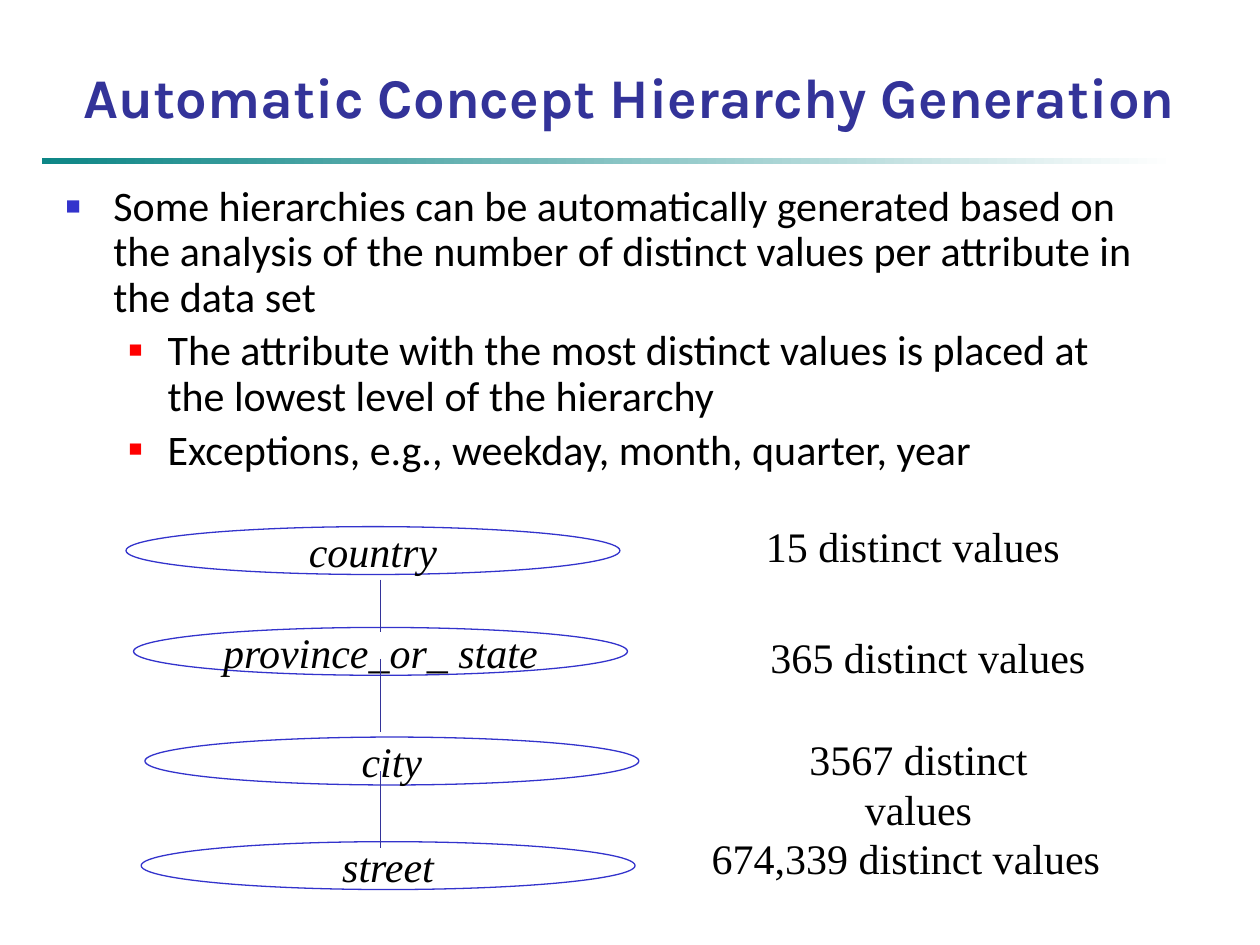
from dataclasses import dataclass

from lxml import etree
from pptx import Presentation
from pptx.dml.color import RGBColor
from pptx.enum import shapes, text
from pptx.oxml import ns
from pptx.util import Inches, Pt


@dataclass(frozen=True)
class Theme:
    title_color: RGBColor = RGBColor(0x33, 0x33, 0x99)
    text_color: RGBColor = RGBColor(0, 0, 0)
    outline: RGBColor = RGBColor(0x33, 0x33, 0xCC)
    bar_start: RGBColor = RGBColor(0x0D, 0x86, 0x86)
    bar_end: RGBColor = RGBColor(0xFF, 0xFF, 0xFF)
    bullet_colors: tuple = ("3333CC", "FF0000")
    bullet_sizes: tuple = (60, 55)
    indents: tuple = ((0.38, -0.38), (0.81, -0.31))
    title_font: str = "Karla"
    body_font: str = "Calibri"
    diagram_font: str = "Times New Roman"
    title_size: Pt = Pt(32)
    text_size: Pt = Pt(24)
    line_width: Pt = Pt(0.75)


class SlideBuilder:
    def __init__(self, slide, theme):
        self.slide = slide
        self.theme = theme

    def place(self, shape, left, top, width, height):
        shape.left, shape.top = Inches(left), Inches(top)
        shape.width, shape.height = Inches(width), Inches(height)

    def format_runs(self, paragraph, name, size, color, bold=False, italic=False):
        for run in paragraph.runs:
            font = run.font
            font.name, font.size = name, size
            font.bold, font.italic = bold, italic
            font.color.rgb = color

    def title(self, wording, *box):
        shape = self.slide.shapes.title
        self.place(shape, *box)
        frame = shape.text_frame
        frame.text = wording
        frame.auto_size = text.MSO_AUTO_SIZE.NONE
        frame.vertical_anchor = text.MSO_ANCHOR.BOTTOM
        paragraph = frame.paragraphs[0]
        paragraph.alignment = text.PP_ALIGN.CENTER
        self.format_runs(paragraph, self.theme.title_font, self.theme.title_size,
                         self.theme.title_color, bold=True)

    def bullet(self, paragraph, level):
        properties = paragraph._p.get_or_add_pPr()
        margin, indent = self.theme.indents[level]
        properties.set("marL", str(Inches(margin)))
        properties.set("indent", str(Inches(indent)))
        color = etree.SubElement(properties, ns.qn("a:buClr"))
        etree.SubElement(color, ns.qn("a:srgbClr"), val=self.theme.bullet_colors[level])
        size = self.theme.bullet_sizes[level] * 1000
        etree.SubElement(properties, ns.qn("a:buSzPct"), val=str(size))
        etree.SubElement(properties, ns.qn("a:buChar"), char="■")

    def bullet_list(self, items, *box):
        shape = self.slide.placeholders[1]
        self.place(shape, *box)
        frame = shape.text_frame
        frame.text = "\n".join(wording for _, wording in items)
        frame.auto_size = text.MSO_AUTO_SIZE.NONE
        for paragraph, (level, _) in zip(frame.paragraphs, items):
            paragraph.level = level
            paragraph.line_spacing = 0.9
            self.bullet(paragraph, level)
            self.format_runs(paragraph, self.theme.body_font, self.theme.text_size,
                             self.theme.text_color)

    def gradient_bar(self, *box):
        shape = self.slide.shapes.add_shape(
            shapes.MSO_SHAPE.RECTANGLE, *map(Inches, box))
        shape.shadow.inherit = False
        shape.line.fill.background()
        shape.fill.gradient()
        shape.fill.gradient_angle = 0
        colors = (self.theme.bar_start, self.theme.bar_end)
        for stop, color, position in zip(shape.fill.gradient_stops, colors, (0, 1)):
            stop.color.rgb = color
            stop.position = position

    def diagram_text(self, shape, wording, wrap=False, italic=False):
        frame = shape.text_frame
        frame.text = wording
        frame.word_wrap = wrap
        paragraph = frame.paragraphs[0]
        paragraph.alignment = text.PP_ALIGN.CENTER
        self.format_runs(paragraph, self.theme.diagram_font, self.theme.text_size,
                         self.theme.text_color, italic=italic)

    def ellipse(self, wording, *box):
        shape = self.slide.shapes.add_shape(
            shapes.MSO_SHAPE.OVAL, *map(Inches, box))
        shape.shadow.inherit = False
        shape.fill.background()
        shape.line.color.rgb = self.theme.outline
        shape.line.width = self.theme.line_width
        shape.text_frame.vertical_anchor = text.MSO_ANCHOR.MIDDLE
        self.diagram_text(shape, wording, italic=True)

    def line(self, x, top, bottom):
        connector = self.slide.shapes.add_connector(
            shapes.MSO_CONNECTOR.STRAIGHT, *map(Inches, (x, top, x, bottom)))
        connector.line.color.rgb = self.theme.title_color
        connector.line.width = self.theme.line_width
        etree.SubElement(connector._element.spPr, ns.qn("a:effectLst"))

    def label(self, wording, wrap, *box):
        shape = self.slide.shapes.add_textbox(*map(Inches, box))
        self.diagram_text(shape, wording, wrap=wrap)
        shape.text_frame.auto_size = text.MSO_AUTO_SIZE.SHAPE_TO_FIT_TEXT


def main():
    presentation = Presentation()
    presentation.slide_width, presentation.slide_height = Inches(10), Inches(7.5)
    slide = presentation.slides.add_slide(presentation.slide_layouts[1])
    builder = SlideBuilder(slide, Theme())

    builder.gradient_bar(0.33, 1.25, 9, 0.05)
    builder.title("Automatic Concept Hierarchy Generation", 0, 0.33, 10, 0.75)
    builder.bullet_list([
        (0, "Some hierarchies can be automatically generated based on the analysis "
            "of the number of distinct values per attribute in the data set"),
        (1, "The attribute with the most distinct values is placed at the lowest "
            "level of the hierarchy"),
        (1, "Exceptions, e.g., weekday, month, quarter, year"),
    ], 0.42, 1.42, 8.83, 2.5)

    levels = [
        ("country", 1, 4.18),
        ("province_or_ state", 1.06, 4.98),
        ("city", 1.15, 5.85),
        ("street", 1.12, 6.68),
    ]
    for wording, left, top in levels:
        builder.ellipse(wording, left, top, 3.92, 0.38)

    for top, bottom in [(4.6, 5.02), (5.23, 5.81), (6.12, 6.73)]:
        builder.line(3.02, top, bottom)

    counts = [
        ("15", False, 5.98, 4.08, 2.53),
        ("365", True, 6, 4.96, 2.73),
        ("3567", False, 5.86, 5.77, 2.86),
        ("674,339", False, 5.55, 6.56, 3.28),
    ]
    for count, wrap, left, top, width in counts:
        builder.label(f"{count} distinct values", wrap, left, top, width, 0.5)

    presentation.save("out.pptx")


if __name__ == "__main__":
    main()
